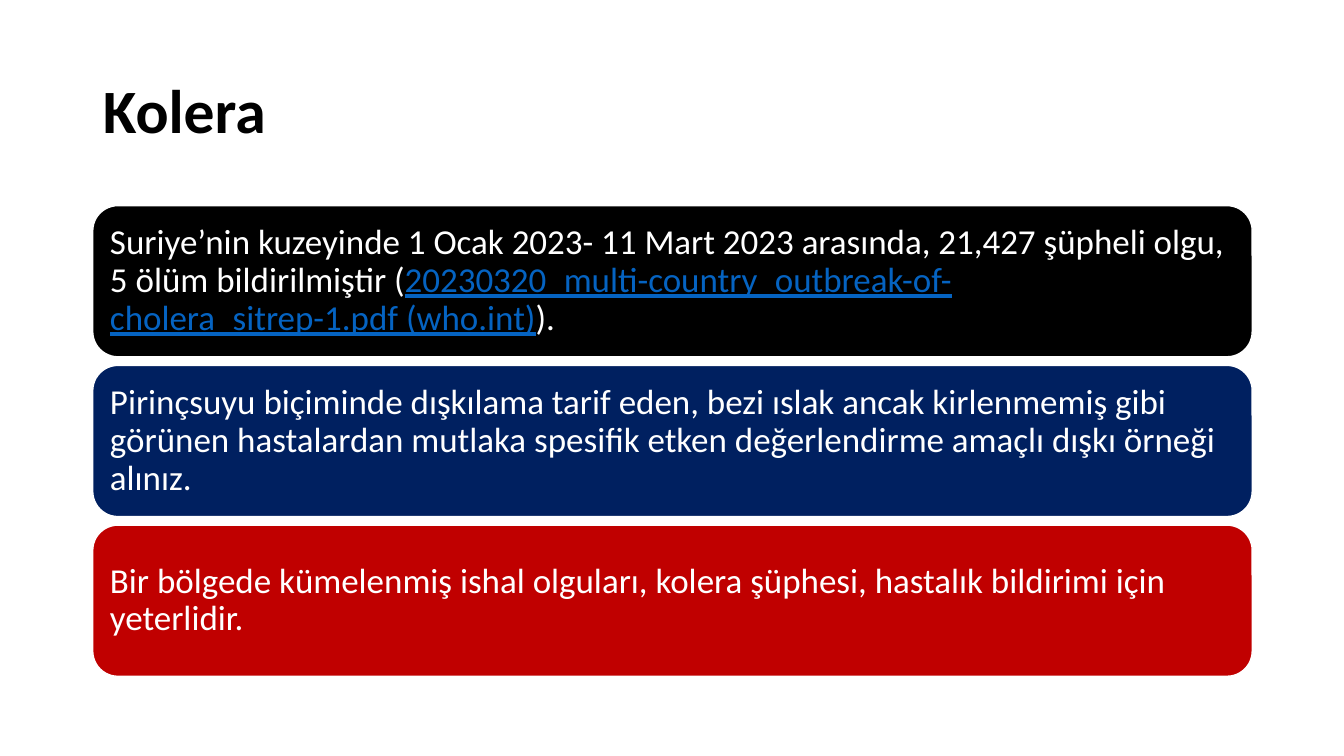
from dataclasses import dataclass

from pptx import Presentation
from pptx.dml.color import RGBColor
from pptx.enum.shapes import MSO_SHAPE
from pptx.enum.text import MSO_ANCHOR, PP_ALIGN
from pptx.slide import Slide
from pptx.text.text import TextFrame
from pptx.util import Inches, Pt

LEFT, WIDTH = 0.92, 11.5
FIRST_TOP, CARD_HEIGHT, CARD_PITCH = 2.04, 1.5, 1.585
WHITE, LINK_BLUE = "FFFFFF", "0563C1"


@dataclass(frozen=True)
class Span:
    text: str
    color: str = WHITE
    underline: bool = False


@dataclass(frozen=True)
class Card:
    fill: str
    spans: tuple[Span, ...]


CARDS = (
    Card("000000", (
        Span("Suriye’nin kuzeyinde 1 Ocak 2023- 11 Mart 2023 arasında, "
             "21,427 şüpheli olgu, 5 ölüm bildirilmiştir ("),
        Span("20230320_multi-country_outbreak-of-cholera_sitrep-1.pdf (who.int)",
             LINK_BLUE, underline=True),
        Span(")."),
    )),
    Card("002060", (
        Span("Pirinçsuyu biçiminde dışkılama tarif eden, bezi ıslak ancak "
             "kirlenmemiş gibi görünen hastalardan mutlaka spesifik etken "
             "değerlendirme amaçlı dışkı örneği alınız."),
    )),
    Card("C00000", (
        Span("Bir bölgede kümelenmiş ishal olguları, kolera şüphesi, "
             "hastalık bildirimi için yeterlidir."),
    )),
)


def rgb(color: str) -> RGBColor:
    return RGBColor.from_string(color)


def write_text(frame: TextFrame, spans: tuple[Span, ...], *, size: float,
               bold: bool = False, inset: float = 0.1) -> None:
    frame.word_wrap = True
    frame.vertical_anchor = MSO_ANCHOR.MIDDLE
    frame.margin_left = frame.margin_right = Inches(inset)
    frame.margin_top = frame.margin_bottom = Inches(inset)
    paragraph = frame.paragraphs[0]
    paragraph.alignment = PP_ALIGN.LEFT
    paragraph.line_spacing = 0.9
    for span in spans:
        run = paragraph.add_run()
        run.text = span.text
        run.font.name = "Calibri"
        run.font.size = Pt(size)
        run.font.bold = bold
        run.font.underline = span.underline
        run.font.color.rgb = rgb(span.color)


def draw_card(slide: Slide, card: Card, top: float) -> None:
    box = slide.shapes.add_shape(
        MSO_SHAPE.ROUNDED_RECTANGLE,
        Inches(LEFT), Inches(top), Inches(WIDTH), Inches(CARD_HEIGHT))
    box.shadow.inherit = False
    box.fill.solid()
    box.fill.fore_color.rgb = rgb(card.fill)
    box.line.color.rgb = rgb(WHITE)
    box.line.width = Pt(1)
    write_text(box.text_frame, card.spans, size=25)


def main() -> None:
    presentation = Presentation()
    presentation.slide_width = Inches(13.33)
    presentation.slide_height = Inches(7.5)
    slide = presentation.slides.add_slide(presentation.slide_layouts[5])

    # Title
    title = slide.shapes.title
    title.left, title.top = Inches(LEFT), Inches(0.4)
    title.width, title.height = Inches(WIDTH), Inches(1.45)
    write_text(title.text_frame, (Span("Kolera", "000000"),), size=44, bold=True)

    # Stacked message cards
    for row, card in enumerate(CARDS):
        draw_card(slide, card, FIRST_TOP + row * CARD_PITCH)

    presentation.save("out.pptx")


if __name__ == "__main__":
    main()
